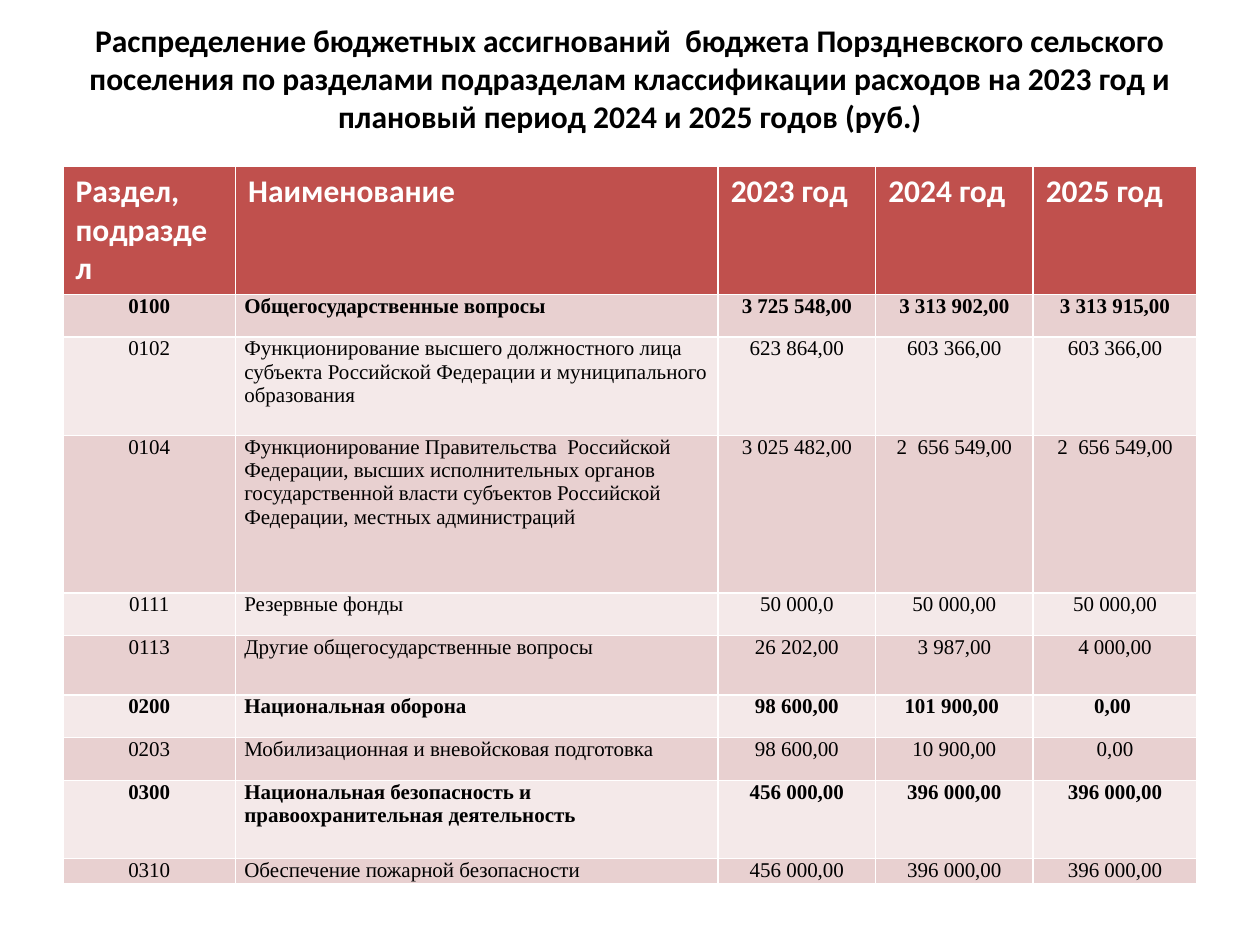
from dataclasses import dataclass
from pptx import Presentation, util as u
from pptx.dml.color import RGBColor
from pptx.enum import text


@dataclass(frozen=True)
class Theme:
    """Colours, fonts and type sizes of the slide."""
    ink: str = "000000"
    pale: str = "FFFFFF"
    head: str = "C0504D"
    bands: tuple = ("E8D0D0", "F4E9E9")
    sans: str = "Calibri"
    serif: str = "Times New Roman"
    big: int = 18
    small: int = 12


THEME = Theme()
WIDE, HIGH = 10, 7.5
EDGE = WIDE / 20
COLS = (1.37, 3.83, 1.25, 1.25, 1.3)
ROWS = (1.01, 0.34, 0.78, 1.25, 0.34, 0.47, 0.34, 0.34, 0.62, 0.2)
TITLE = ("Распределение бюджетных ассигнований  бюджета Порздневского сельского "
         "поселения по разделами подразделам классификации расходов на 2023 год "
         "и плановый период 2024 и 2025 годов (руб.)")
HEADS = ("Раздел, подраздел", "Наименование", "2023 год", "2024 год", "2025 год")
BUDGET = (
    ("0100", "Общегосударственные вопросы",
     "3 725 548,00", "3 313 902,00", "3 313 915,00"),
    ("0102", "Функционирование высшего должностного лица субъекта Российской "
     "Федерации и муниципального образования",
     "623 864,00", "603 366,00", "603 366,00"),
    ("0104", "Функционирование Правительства  Российской Федерации, высших "
     "исполнительных органов государственной власти субъектов Российской "
     "Федерации, местных администраций",
     "3 025 482,00", "2  656 549,00", "2  656 549,00"),
    ("0111", "Резервные фонды", "50 000,0", "50 000,00", "50 000,00"),
    ("0113", "Другие общегосударственные вопросы",
     "26 202,00", "3 987,00", "4 000,00"),
    ("0200", "Национальная оборона", "98 600,00", "101 900,00 ", "0,00 "),
    ("0203", "Мобилизационная и вневойсковая подготовка",
     "98 600,00", "10 900,00", "0,00"),
    ("0300", "Национальная безопасность и правоохранительная деятельность",
     "456 000,00", "396 000,00", "396 000,00"),
    ("0310", "Обеспечение пожарной безопасности",
     "456 000,00", "396 000,00", "396 000,00"),
)


def write(frame, words, face, size, ink, bold, align):
    """Put one formatted paragraph in a text frame."""
    frame.text = words
    para = frame.paragraphs[0]
    para.alignment = align
    for run in para.runs:
        font = run.font
        font.name, font.size, font.bold = face, u.Pt(size), bold
        font.color.rgb = RGBColor.from_string(ink)


def paint(cell, tint):
    """Fill a table cell with one colour."""
    cell.fill.solid()
    cell.fill.fore_color.rgb = RGBColor.from_string(tint)


def add_title(slide):
    """Place and format the title."""
    title = slide.shapes.title
    title.left, title.top = u.Inches(EDGE), u.Inches(HIGH * 0.04)
    title.width, title.height = u.Inches(WIDE - 2 * EDGE), u.Inches(HIGH / 6)
    frame = title.text_frame
    frame.vertical_anchor = text.MSO_ANCHOR.MIDDLE
    frame.margin_bottom = u.Inches(0.66)
    write(frame, TITLE, THEME.sans, THEME.big, THEME.ink, True, text.PP_ALIGN.CENTER)


def add_head(table):
    """Fill in the heading row."""
    for cell, words in zip(table.rows[0].cells, HEADS):
        paint(cell, THEME.head)
        write(cell.text_frame, words, THEME.sans, THEME.big, THEME.pale, True,
              text.PP_ALIGN.LEFT)


def add_line(row, entry, tint):
    """Fill in one budget line, bold for a whole section."""
    bold = entry[0].endswith("00")
    for col, (cell, words) in enumerate(zip(row.cells, entry)):
        paint(cell, tint)
        cell.margin_left = cell.margin_right = u.Inches(0.07)
        cell.margin_top = cell.margin_bottom = 0
        align = text.PP_ALIGN.LEFT if col == 1 else text.PP_ALIGN.CENTER
        write(cell.text_frame, words, THEME.serif, THEME.small, THEME.ink, bold, align)


def add_budget(slide):
    """Add the budget table."""
    table = slide.shapes.add_table(
        len(ROWS), len(COLS), u.Inches(EDGE), u.Inches(1.32),
        u.Inches(sum(COLS)), u.Inches(sum(ROWS))).table
    for col, width in zip(table.columns, COLS):
        col.width = u.Inches(width)
    for row, height in zip(table.rows, ROWS):
        row.height = u.Inches(height)
    add_head(table)
    for num, entry in enumerate(BUDGET):
        add_line(table.rows[num + 1], entry, THEME.bands[num % 2])


def main():
    """Build and save the slide."""
    deck = Presentation()
    deck.slide_width, deck.slide_height = u.Inches(WIDE), u.Inches(HIGH)
    slide = deck.slides.add_slide(deck.slide_layouts[5])
    add_title(slide)
    add_budget(slide)
    deck.save("out.pptx")


if __name__ == "__main__":
    main()
